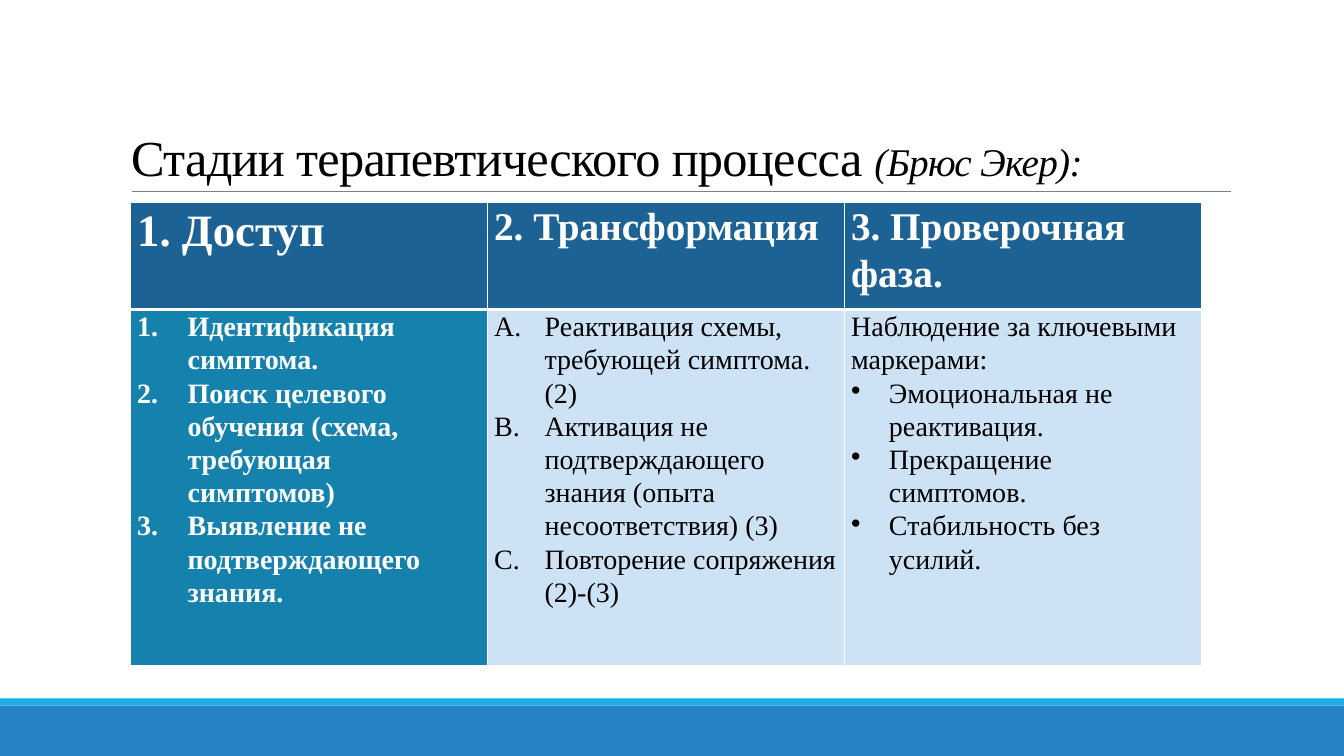
from dataclasses import dataclass

import lxml.etree
import pptx
import pptx.dml.color
import pptx.enum.shapes
import pptx.enum.text
import pptx.oxml
import pptx.oxml.ns
import pptx.slide
import pptx.table
import pptx.text.text
import pptx.util

Pt = pptx.util.Pt
RGBColor = pptx.dml.color.RGBColor
qn = pptx.oxml.ns.qn

FONT = "Times New Roman"
WHITE = RGBColor(0xFF, 0xFF, 0xFF)
BLACK = RGBColor(0, 0, 0)
GRAY = RGBColor(0x80, 0x80, 0x80)
BLUE = RGBColor(0x26, 0x83, 0xC6)
CYAN = RGBColor(0x1C, 0xAD, 0xE4)
NAVY = RGBColor(0x1D, 0x62, 0x94)
TEAL = RGBColor(0x14, 0x82, 0xAC)
PALE = RGBColor(0xCD, 0xE3, 0xF5)

NUMBERS = ("buAutoNum", "type", "arabicPeriod", 36)
LETTERS = ("buAutoNum", "type", "alphaUcPeriod", 36)
DOTS = ("buChar", "char", "•", 27)


@dataclass
class Band:
    top: float
    height: float
    color: RGBColor


@dataclass
class Stage:
    heading: str
    heading_size: float
    items: list[str]
    bullet: tuple[str, str, str, float]
    fill: RGBColor
    color: RGBColor
    bold: bool = False
    intro: str = ""


BANDS = [Band(504, 36, BLUE), Band(498.8, 5.2, CYAN)]

STAGES = [
    Stage("1. Доступ", 32,
          ["Идентификация симптома.",
           "Поиск целевого обучения (схема, требующая симптомов)",
           "Выявление не подтверждающего знания."],
          NUMBERS, TEAL, WHITE, bold=True),
    Stage("2. Трансформация", 28,
          ["Реактивация схемы, требующей симптома. (2)",
           "Активация не подтверждающего знания (опыта несоответствия) (3)",
           "Повторение сопряжения (2)-(3)"],
          LETTERS, PALE, BLACK),
    Stage("3. Проверочная фаза.", 28,
          ["Эмоциональная не реактивация.",
           "Прекращение симптомов.",
           "Стабильность без усилий."],
          DOTS, PALE, BLACK, intro="Наблюдение за ключевыми маркерами:"),
]


def add_run(paragraph: pptx.text.text._Paragraph, text: str, size: float,
            color: RGBColor, bold: bool = False, italic: bool = False) -> pptx.text.text._Run:
    run = paragraph.add_run()
    run.text = text
    run.font.name = FONT
    run.font.size = Pt(size)
    run.font.color.rgb = color
    run.font.bold = bold
    run.font.italic = italic
    return run


def add_band(slide: pptx.slide.Slide, band: Band) -> None:
    shape = slide.shapes.add_shape(pptx.enum.shapes.MSO_SHAPE.RECTANGLE,
                                   Pt(0), Pt(band.top), Pt(960), Pt(band.height))
    shape.shadow.inherit = False
    shape.fill.solid()
    shape.fill.fore_color.rgb = band.color
    shape.line.fill.background()


def add_title_rule(slide: pptx.slide.Slide) -> None:
    connector = slide.shapes.add_connector(pptx.enum.shapes.MSO_CONNECTOR.STRAIGHT,
                                           Pt(94.3), Pt(136.8), Pt(879), Pt(136.8))
    connector.line.color.rgb = GRAY
    connector.line.width = Pt(0.5)
    lxml.etree.SubElement(connector._element.spPr, qn("a:effectLst"))


def fill_title(slide: pptx.slide.Slide) -> None:
    title = slide.shapes.title
    title.left, title.top, title.width, title.height = Pt(86.4), Pt(22.3), Pt(792), Pt(114.5)
    title.text_frame.word_wrap = True
    title.text_frame.vertical_anchor = pptx.enum.text.MSO_ANCHOR.BOTTOM
    paragraph = title.text_frame.paragraphs[0]
    paragraph.alignment = pptx.enum.text.PP_ALIGN.LEFT
    paragraph.line_spacing = 0.85
    runs = [add_run(paragraph, "Стадии терапевтического процесса ", 36, BLACK),
            add_run(paragraph, "(Брюс Экер):", 28, BLACK, italic=True)]
    for run in runs:
        run.font._element.set("spc", "-50")


def format_cell(cell: pptx.table._Cell, fill: RGBColor, top: float, bottom: float) -> None:
    """Set insets, white borders of the given top and bottom widths, and the fill."""
    cell.margin_left = cell.margin_right = Pt(5)
    cell.margin_top = cell.margin_bottom = Pt(0)
    properties = cell._tc.get_or_add_tcPr()
    for side, width in (("L", 1), ("R", 1), ("T", top), ("B", bottom)):
        line = lxml.etree.SubElement(properties, qn(f"a:ln{side}"), w=str(Pt(width)))
        solid = lxml.etree.SubElement(line, qn("a:solidFill"))
        lxml.etree.SubElement(solid, qn("a:srgbClr"), val=str(WHITE))
    cell.fill.solid()
    cell.fill.fore_color.rgb = fill


def add_bullet(paragraph: pptx.text.text._Paragraph,
               bullet: tuple[str, str, str, float]) -> None:
    tag, attribute, value, indent = bullet
    properties = paragraph._p.get_or_add_pPr()
    properties.set("marL", str(Pt(indent)))
    properties.set("indent", str(-Pt(indent)))
    lxml.etree.SubElement(properties, qn(f"a:{tag}")).set(attribute, value)


def fill_stage(table: pptx.table.Table, column: int, stage: Stage) -> None:
    header, body = table.cell(0, column), table.cell(1, column)
    format_cell(header, NAVY, top=1, bottom=3)
    format_cell(body, stage.fill, top=3, bottom=1)

    heading = header.text_frame.paragraphs[0]
    heading.line_spacing = 1.07
    add_run(heading, stage.heading, stage.heading_size, WHITE, bold=True)

    lines = [(stage.intro, None)] if stage.intro else []
    lines += [(item, stage.bullet) for item in stage.items]
    for index, (text, bullet) in enumerate(lines):
        frame = body.text_frame
        paragraph = frame.add_paragraph() if index else frame.paragraphs[0]
        paragraph.line_spacing = 1.07
        if bullet:
            add_bullet(paragraph, bullet)
        add_run(paragraph, text, 20, stage.color, stage.bold)


def add_stage_table(slide: pptx.slide.Slide) -> None:
    frame = slide.shapes.add_table(2, len(STAGES), Pt(93), Pt(144.8), Pt(765), Pt(331))
    table = frame.table
    table.rows[0].height, table.rows[1].height = Pt(76.2), Pt(254.8)
    for column, stage in enumerate(STAGES):
        table.columns[column].width = Pt(255)
        fill_stage(table, column, stage)


def main() -> None:
    presentation = pptx.Presentation()
    presentation.slide_width, presentation.slide_height = Pt(960), Pt(540)
    slide = presentation.slides.add_slide(presentation.slide_layouts.get_by_name("Title Only"))
    for band in BANDS:
        add_band(slide, band)
    add_title_rule(slide)
    fill_title(slide)
    add_stage_table(slide)
    presentation.save("out.pptx")


if __name__ == "__main__":
    main()
